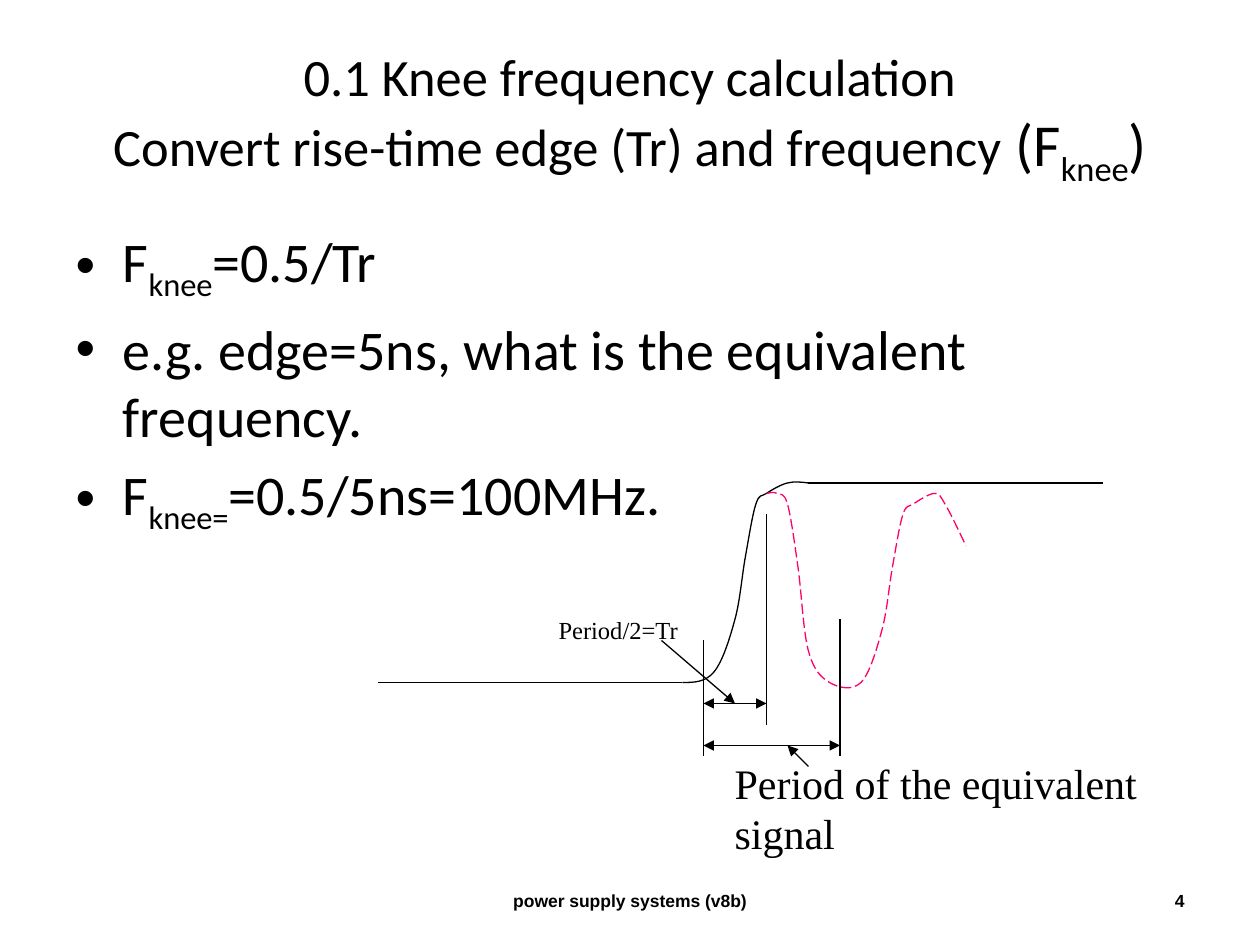
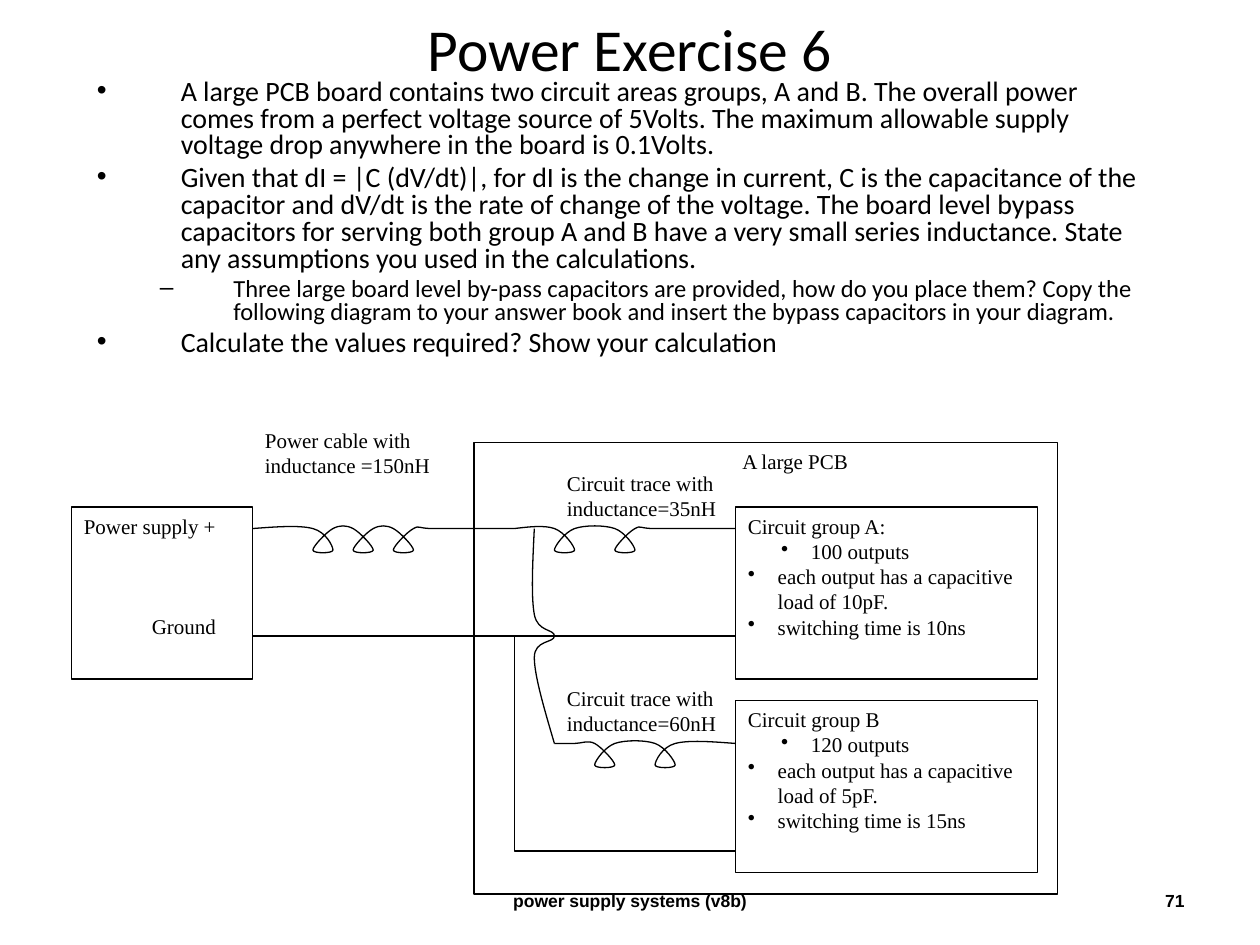
from dataclasses import dataclass, field
from typing import Any, NamedTuple

from lxml import etree
from pptx import Presentation
from pptx import util as u
from pptx.dml import color
from pptx.enum import dml, shapes, text
from pptx.oxml import ns


# Theme and data types
@dataclass(frozen=True)
class Theme:
    ink: color.RGBColor = color.RGBColor(0, 0, 0)
    paper: color.RGBColor = color.RGBColor(255, 255, 255)
    signal: color.RGBColor = color.RGBColor(0xFF, 0x00, 0x66)
    main_font: str = "Calibri"
    drawing_font: str = "Times New Roman"
    footer_font: str = "Arial"
    title: int = 34
    title_small: int = 30
    body: int = 32
    body_small: int = 16
    body_sub: int = 14
    callout: int = 24
    label: int = 14
    circuit: int = 12
    footer: int = 10
    line: float = 0.75


THEME = Theme()
FOOTER = "power supply systems (v8b)"
Point = tuple[float, float]


class Box(NamedTuple):
    """Left, top, width and height in centimetres."""
    left: float
    top: float
    width: float
    height: float

    def lengths(self) -> list[u.Cm]:
        return [u.Cm(value) for value in self]


class Span(NamedTuple):
    text: str
    size: int | None = None
    baseline: int = 0


class Indent(NamedTuple):
    left: float
    first: float = 0


@dataclass
class Para:
    spans: list[Span]
    indent: Indent | None = None
    bullet: str = ""
    formats: dict[str, Any] = field(default_factory=dict)


class Grid(NamedTuple):
    """Drawing grid: origin and step in centimetres."""
    left: float
    top: float
    step_x: float
    step_y: float

    def point(self, column: float, row: float) -> tuple[u.Cm, u.Cm]:
        return (u.Cm(self.left + column * self.step_x),
                u.Cm(self.top + row * self.step_y))

    def box(self, column: float, row: float, columns: float, rows: float) -> Box:
        return Box(self.left + column * self.step_x, self.top + row * self.step_y,
                   columns * self.step_x, rows * self.step_y)


class Wire(NamedTuple):
    start: Point
    end: Point
    arrows: tuple[str, ...] = ()


# Text
def plain(words: str, **formats: Any) -> Para:
    return Para([Span(words)], formats=formats)


def apply_formats(target: Any, formats: dict[str, Any]) -> None:
    for name, value in formats.items():
        setattr(target, name, value)


def write(frame: Any, paras: list[Para], font: str, size: int, **formats: Any) -> None:
    for index, item in enumerate(paras):
        para = frame.paragraphs[0] if index == 0 else frame.add_paragraph()
        apply_formats(para, formats | item.formats)
        properties = para._p.get_or_add_pPr()
        if item.indent:
            properties.set("marL", str(u.Cm(item.indent.left)))
            properties.set("indent", str(u.Cm(item.indent.first)))
        if item.bullet:
            etree.SubElement(properties, ns.qn("a:buChar")).set("char", item.bullet)
        for span in item.spans:
            if span.text == "\n":
                para.add_line_break()
                continue
            run = para.add_run()
            run.text = span.text
            apply_formats(run.font, {"name": font, "size": u.Pt(span.size or size)})
            run.font.color.rgb = THEME.ink
            if span.baseline:
                run._r.get_or_add_rPr().set("baseline", str(span.baseline * 1000))


def fill_placeholder(holder: Any, box: Box, paras: list[Para], size: int,
                     **formats: Any) -> None:
    names = ("left", "top", "width", "height")
    apply_formats(holder, dict(zip(names, box.lengths())))
    holder.text_frame.auto_size = text.MSO_AUTO_SIZE.NONE
    write(holder.text_frame, paras, THEME.main_font, size, **formats)


def add_label(page: Any, box: Box, paras: list[Para], size: int, wrap: bool = True,
              font: str = THEME.drawing_font,
              anchor: Any = text.MSO_ANCHOR.TOP, **formats: Any) -> Any:
    label = page.shapes.add_textbox(*box.lengths())
    apply_formats(label.text_frame, {"word_wrap": wrap, "vertical_anchor": anchor})
    write(label.text_frame, paras, font, size, **formats)
    return label


# Drawing parts
def style_line(line: Any, ink: color.RGBColor = THEME.ink) -> None:
    line.color.rgb = ink
    line.width = u.Pt(THEME.line)


def add_wire(page: Any, grid: Grid, wire: Wire) -> None:
    connector = page.shapes.add_connector(
        shapes.MSO_CONNECTOR.STRAIGHT, *grid.point(*wire.start), *grid.point(*wire.end))
    style_line(connector.line)
    outline = connector.line._get_or_add_ln()
    for end in wire.arrows:
        etree.SubElement(outline, ns.qn(f"a:{end}")).set("type", "triangle")
    etree.SubElement(connector._element.spPr, ns.qn("a:effectLst"))


def add_outline(page: Any, grid: Grid, points: list[Point],
                ink: color.RGBColor = THEME.ink, dash: Any = None) -> Any:
    first, *rest = [grid.point(*point) for point in points]
    builder = page.shapes.build_freeform(*first)
    builder.add_line_segments(rest, close=False)
    outline = builder.convert_to_shape()
    outline.shadow.inherit = False
    outline.fill.background()
    style_line(outline.line, ink)
    if dash:
        outline.line.dash_style = dash
    return outline


def with_handles(nodes: list[Point]) -> list[Point]:
    """Nodes with two curve handles between each pair, tangents set by neighbours."""
    last = len(nodes) - 1

    def handle(index: int, sign: int) -> Point:
        (x, y), before, after = nodes[index], nodes[index - 1], nodes[index + 1]
        return (x + sign * (after[0] - before[0]) / 6,
                y + sign * (after[1] - before[1]) / 6)

    def middle(one: Point, two: Point) -> Point:
        return (one[0] + two[0]) / 2, (one[1] + two[1]) / 2

    points = [nodes[0]]
    for index in range(last):
        start, end = nodes[index], nodes[index + 1]
        leave = handle(index, 1) if index > 0 else middle(start, handle(1, -1))
        arrive = (handle(index + 1, -1) if index + 1 < last
                  else middle(end, handle(index, 1)))
        points += [leave, arrive, end]
    return points


def add_curve(page: Any, grid: Grid, nodes: list[Point], **looks: Any) -> None:
    curve = add_outline(page, grid, with_handles(nodes), **looks)
    segments = list(curve._element.iter(ns.qn("a:lnTo")))
    route = segments[0].getparent()
    for index in range(0, len(segments), 3):
        bend = etree.SubElement(route, ns.qn("a:cubicBezTo"))
        for segment in segments[index:index + 3]:
            bend.append(segment[0])
            route.remove(segment)


def add_block(page: Any, box: Box, paras: list[Para]) -> None:
    block = page.shapes.add_shape(shapes.MSO_SHAPE.RECTANGLE, *box.lengths())
    block.shadow.inherit = False
    block.fill.solid()
    block.fill.fore_color.rgb = THEME.paper
    style_line(block.line)
    block.text_frame.vertical_anchor = text.MSO_ANCHOR.TOP
    write(block.text_frame, paras, THEME.drawing_font, THEME.circuit,
          alignment=text.PP_ALIGN.LEFT)


def coil(start: list[Point], turns: list[int], row: int, end: list[Point]) -> list[Point]:
    loops = [point for x in turns
             for point in ((x, row), (x + 1, row + 1), (x, row + 1), (x + 1, row))]
    return start + loops + end


def add_page(deck: Any, number: int) -> Any:
    page = deck.slides.add_slide(deck.slide_layouts[1])
    for box, words, side in (
            (Box(8.68, 17.65, 8.04, 1.02), FOOTER, text.PP_ALIGN.CENTER),
            (Box(18.2, 17.65, 5.93, 1.02), str(number), text.PP_ALIGN.RIGHT)):
        label = add_label(page, box, [plain(words)], THEME.footer, font=THEME.footer_font,
                          anchor=text.MSO_ANCHOR.MIDDLE, alignment=side)
        label.text_frame.paragraphs[0].runs[0].font.bold = True
    return page


# Slide: knee frequency
def build_knee_frequency(deck: Any) -> None:
    page = add_page(deck, 4)
    fill_placeholder(page.shapes.title, Box(1.27, 0.76, 22.86, 3.18), [Para([
        Span("0.1 Knee frequency calculation"), Span("\n"),
        Span("Convert rise-time edge (Tr) and frequency"),
        Span(" (F", THEME.title), Span("knee", THEME.title, -25), Span(")", THEME.title),
    ])], THEME.title_small, alignment=text.PP_ALIGN.CENTER)
    fill_placeholder(page.placeholders[1], Box(1.27, 4.44, 22.86, 12.57), [
        Para([Span("F"), Span("knee", baseline=-25), Span("=0.5/Tr")]),
        plain("e.g. edge=5ns, what is the equivalent frequency."),
        Para([Span("F"), Span("knee=", baseline=-25), Span("=0.5/5ns=100MHz.")]),
    ], THEME.body)

    grid = Grid(0, 0, 2.54 / 12, 2.54 / 12)
    rising_edge = [(65, 65), (68, 64), (70, 59), (71, 53), (72, 48), (73, 47),
                   (75, 46), (77, 46)]
    equivalent_signal = [(73, 47), (74, 47), (75, 48), (76, 54), (77, 62), (79, 65),
                         (82, 65), (84, 60), (85, 54), (86, 49), (87, 48), (89, 47),
                         (90, 48), (92, 52)]
    add_curve(page, grid, rising_edge)
    add_curve(page, grid, equivalent_signal, ink=THEME.signal, dash=dml.MSO_LINE.LONG_DASH)
    both = ("headEnd", "tailEnd")
    for wire in (
            Wire((36, 65), (65, 65)), Wire((77, 46), (105, 46)),
            Wire((67, 61), (67, 72)), Wire((80, 59), (80, 72)), Wire((73, 49), (73, 69)),
            Wire((67, 67), (73, 67), both), Wire((67, 71), (80, 71), both),
            Wire((77, 73), (75, 71), ("tailEnd",)),
            Wire((63, 61), (70, 67), ("tailEnd",))):
        add_wire(page, grid, wire)
    add_label(page, Box(11.01, 12.28, 2.92, 0.84), [plain("Period/2=Tr")],
              THEME.label, wrap=False)
    add_label(page, Box(14.56, 15.14, 8.81, 2.29),
              [plain("Period of the equivalent"), plain("signal")],
              THEME.callout, wrap=False)


# Slide: power exercise
def build_power_exercise(deck: Any) -> None:
    page = add_page(deck, 71)
    fill_placeholder(page.shapes.title, Box(1.9, 0, 21.59, 1.91),
                     [plain("Power Exercise 6")], THEME.title,
                     alignment=text.PP_ALIGN.CENTER)
    main_indent, sub_indent = Indent(1.69, -1.69), Indent(2.75, -1.48)
    fill_placeholder(page.placeholders[1], Box(1.7, 1.48, 21.59, 6.14), [
        Para([Span("A large PCB board contains two circuit areas groups, A and B. The overall power comes from a perfect voltage source of 5Volts. The maximum allowable supply voltage drop anywhere in the board is 0.1Volts.")], main_indent),
        Para([Span("Given that dI = |C (dV/dt)|, for dI is the change in current, C is the capacitance of the capacitor and dV/dt is the rate of change of the voltage. The board level bypass capacitors for serving both group A and B have a very small series inductance. State any assumptions you used in the calculations.")], main_indent),
        Para([Span("Three large board level by-pass capacitors are provided, how do you place them? Copy the following diagram to your answer book and insert the bypass capacitors in your diagram.", THEME.body_sub)], sub_indent, formats={"level": 1}),
        Para([Span("Calculate the values required? Show your calculation")], main_indent),
    ], THEME.body_small, line_spacing=0.8)

    # Blocks
    grid = Grid(1.44, 8.49, 19.88 / 49, 9.53 / 22)
    add_block(page, grid.box(0, 4, 9, 8), [
        plain("Power supply +"),
        Para([Span("Ground")], Indent(1.37), formats={"space_before": u.Pt(43)})])
    add_block(page, grid.box(20, 1, 29, 21), [Para([Span("A large PCB")], Indent(5.16))])
    for row, name, outputs, load, delay in ((4, "A:", 100, 10, 10), (13, "B", 120, 5, 15)):
        add_block(page, grid.box(33, row, 15, 8), [
            plain(f"Circuit group {name}"),
            Para([Span(f"{outputs} outputs")], Indent(1.27, -0.6), "•", {"level": 1}),
            Para([Span(f"each output has a capacitive load of {load}pF.")],
                 Indent(0.6, -0.6), "•"),
            Para([Span(f"switching time is {delay}ns")], Indent(0.6, -0.6), "•")])

    # Cable, traces and ground
    for nodes in (
            coil([(9, 5)], [12, 14, 16], 5, [(18, 5), (22, 5)]),
            coil([(22, 5)], [24, 27], 5, [(29, 5), (33, 5)]),
            coil([(24, 15), (25, 15)], [26, 29], 15, [(33, 15)]),
            [(23, 5), (23, 9), (24, 10), (23, 11), (24, 15)]):
        add_curve(page, grid, nodes)
    add_outline(page, grid, [(22, 10), (22, 20), (33, 20)])
    for start, end in ((9, 22), (22, 33)):
        add_wire(page, grid, Wire((start, 10), (end, 10)))
    for column, row, width, words in (
            (9, 0, 10, "Power cable with inductance =150nH"),
            (24, 12, 11, "Circuit trace with inductance=60nH"),
            (24, 2, 11, "Circuit trace with inductance=35nH")):
        add_label(page, grid.box(column, row, width, 8), [plain(words)], THEME.circuit)


def main() -> None:
    deck = Presentation()
    deck.slide_width, deck.slide_height = u.Cm(25.4), u.Cm(19.05)
    build_knee_frequency(deck)
    build_power_exercise(deck)
    deck.save("out.pptx")


if __name__ == "__main__":
    main()
